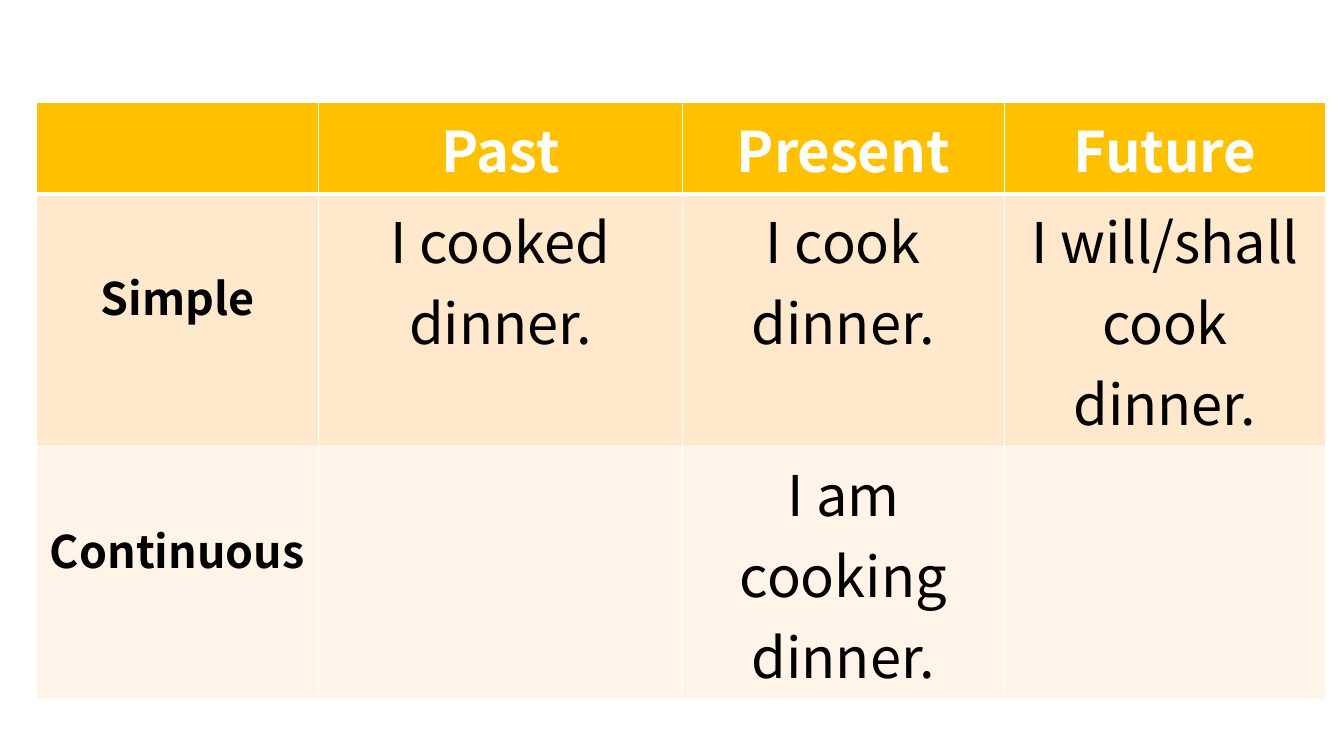
"""Build a slide with a table of English verb tenses."""
from dataclasses import dataclass

from lxml.etree import SubElement
from pptx import Presentation
from pptx.dml.color import RGBColor
from pptx.enum.text import PP_ALIGN
from pptx.oxml.ns import qn
from pptx.table import _Cell
from pptx.util import Inches, Pt

FONT = "Noto Sans CJK JP"
COLORS = {
    "header": "FFC000",
    "simple": "FFE8CC",
    "continuous": "FFF4E7",
    "white": "FFFFFF",
    "black": "000000",
}
COL_WIDTHS = [2.8, 3.61, 3.19, 3.19]
LABEL_TOP = 0.69


@dataclass
class TenseRow:
    """A table row with its look."""

    texts: list[str]
    height: float
    fill: str
    color: str = "black"
    header: bool = False
    top: int = 1
    bottom: int = 1


ROWS = [
    TenseRow(["", "Past", "Present", "Future"], 0.86, "header", "white", header=True, bottom=3),
    TenseRow(
        ["Simple", "I cooked dinner.", "I cook dinner.", "I will/shall cook dinner."],
        2.3, "simple", top=3,
    ),
    TenseRow(["Continuous", "", "I am cooking dinner.", ""], 2.3, "continuous"),
]


def add_borders(cell: _Cell, row: TenseRow) -> None:
    """Draw white lines on the four sides of a cell."""
    tc_pr = cell._tc.get_or_add_tcPr()
    for side, width in {"L": 1, "R": 1, "T": row.top, "B": row.bottom}.items():
        ln = SubElement(tc_pr, qn(f"a:ln{side}"), w=str(Pt(width)))
        fill = SubElement(ln, qn("a:solidFill"))
        SubElement(fill, qn("a:srgbClr"), val=COLORS["white"])


def fill_cell(cell: _Cell, text: str, row: TenseRow, label: bool) -> None:
    """Set the borders, fill and text of a cell."""
    add_borders(cell, row)
    cell.fill.solid()
    cell.fill.fore_color.rgb = RGBColor.from_string(COLORS[row.fill])
    if not text:
        return
    if label:
        cell.margin_top = Inches(LABEL_TOP)
    p = cell.text_frame.paragraphs[0]
    p.text = text
    p.alignment = PP_ALIGN.CENTER
    font = p.runs[0].font
    font.name = FONT
    font.size = Pt(32 if label else 40)
    font.bold = label or row.header
    font.color.rgb = RGBColor.from_string(COLORS[row.color])


def main() -> None:
    """Build and save the slide."""
    prs = Presentation()
    prs.slide_width, prs.slide_height = Inches(13.33), Inches(7.5)
    s = prs.slides.add_slide(prs.slide_layouts[6])
    height = sum(row.height for row in ROWS)
    table = s.shapes.add_table(
        len(ROWS), len(COL_WIDTHS),
        Inches(0.36), Inches(1.02), Inches(sum(COL_WIDTHS)), Inches(height),
    ).table
    for column, width in zip(table.columns, COL_WIDTHS):
        column.width = Inches(width)
    for i, row in enumerate(ROWS):
        table.rows[i].height = Inches(row.height)
        for j, text in enumerate(row.texts):
            fill_cell(table.cell(i, j), text, row, label=j == 0)
    prs.save("out.pptx")


if __name__ == "__main__":
    main()
